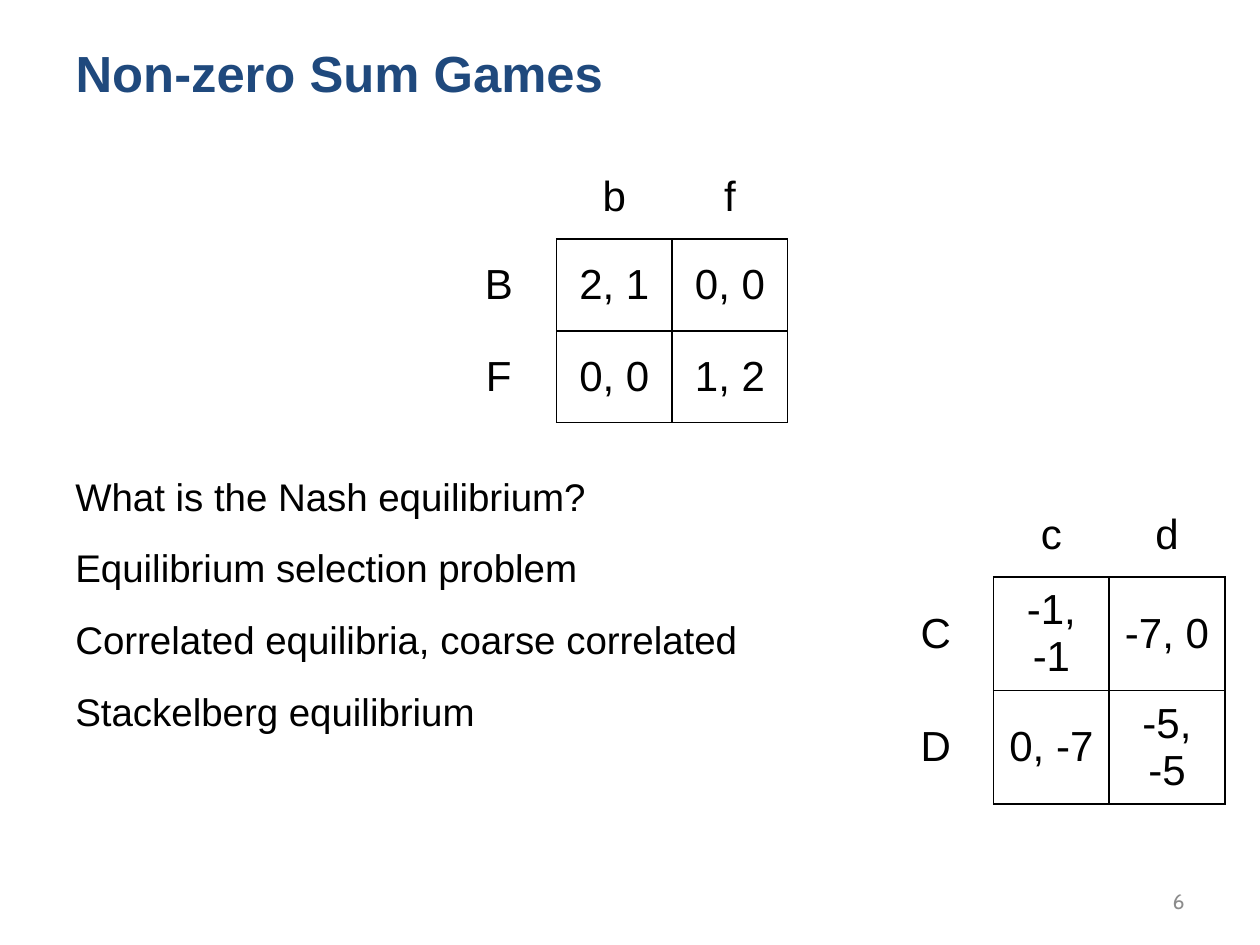
from lxml.etree import SubElement
from pptx import Presentation
from pptx.dml.color import RGBColor
from pptx.enum.text import MSO_ANCHOR, MSO_AUTO_SIZE, PP_ALIGN
from pptx.oxml.ns import qn
from pptx.util import Cm, Pt

COLORS = {"title": "1F497D", "text": "000000", "number": "8C8C8C"}
QUESTIONS = [
    "What is the Nash equilibrium?",
    "Equilibrium selection problem",
    "Correlated equilibria, coarse correlated",
    "Stackelberg equilibrium",
]
COORDINATION_GAME = [["", "b", "f"], ["B", "2, 1", "0, 0"], ["F", "0, 0", "1, 2"]]
PRISONERS_GAME = [["", "c", "d"], ["C", "-1, -1", "-7, 0"], ["D", "0, -7", "-5, -5"]]


def add_run(paragraph, text, size, color, font_name="Arial", bold=False):
    run = paragraph.add_run()
    run.text = text
    run.font.name = font_name
    run.font.size = Pt(size)
    run.font.bold = bold
    run.font.color.rgb = RGBColor.from_string(COLORS[color])


def add_text_box(slide, left, top, width, height):
    text_frame = slide.shapes.add_textbox(left, top, width, height).text_frame
    text_frame.word_wrap = True
    return text_frame


def place_title(slide, left, top, width, height):
    title = slide.shapes.title
    title.left, title.top, title.width, title.height = left, top, width, height
    text_frame = title.text_frame
    text_frame.auto_size = MSO_AUTO_SIZE.NONE
    text_frame.vertical_anchor = MSO_ANCHOR.MIDDLE
    paragraph = text_frame.paragraphs[0]
    paragraph.alignment = PP_ALIGN.LEFT
    add_run(paragraph, "Non-zero Sum Games", 29, "title", bold=True)


def add_questions(slide, left, top, width, height):
    text_frame = add_text_box(slide, left, top, width, height)
    for index, question in enumerate(QUESTIONS):
        paragraph = text_frame.add_paragraph() if index else text_frame.paragraphs[0]
        paragraph.line_spacing = Pt(26)
        if index:
            paragraph.space_before = Pt(15)
        add_run(paragraph, question, 22, "text")


def add_slide_number(slide, left, top, width, height):
    text_frame = add_text_box(slide, left, top, width, height)
    text_frame.vertical_anchor = MSO_ANCHOR.MIDDLE
    paragraph = text_frame.paragraphs[0]
    paragraph.alignment = PP_ALIGN.RIGHT
    add_run(paragraph, "6", 12, "number", "Cabin")


def set_borders(cell, row, column):
    """Draw only the edges that touch a payoff cell."""
    payoff = row > 0 and column > 0
    drawn = {
        "a:lnL": payoff,
        "a:lnR": row > 0,
        "a:lnT": payoff,
        "a:lnB": column > 0,
    }
    properties = cell._tc.get_or_add_tcPr()
    for tag, visible in drawn.items():
        line = SubElement(properties, qn(tag), w=str(Pt(1)))
        if visible:
            fill = SubElement(line, qn("a:solidFill"))
            SubElement(fill, qn("a:srgbClr"), val=COLORS["text"])
        else:
            SubElement(line, qn("a:noFill"))


def add_payoff_table(slide, left, top, game):
    column_width, row_heights = Cm(2.33), [Cm(1.7), Cm(1.85), Cm(1.85)]
    table = slide.shapes.add_table(
        len(game), len(game[0]), left, top,
        column_width * len(game[0]), sum(row_heights),
    ).table
    table.first_row = table.horz_banding = False
    for column in table.columns:
        column.width = column_width
    for row, values in enumerate(game):
        table.rows[row].height = row_heights[row]
        for column, value in enumerate(values):
            cell = table.cell(row, column)
            cell.vertical_anchor = MSO_ANCHOR.MIDDLE
            set_borders(cell, row, column)
            cell.fill.background()
            if value:
                paragraph = cell.text_frame.paragraphs[0]
                paragraph.alignment = PP_ALIGN.CENTER
                add_run(paragraph, value, 24, "text")


def main():
    presentation = Presentation()
    presentation.slide_width, presentation.slide_height = Cm(25.4), Cm(19.05)
    slide = presentation.slides.add_slide(presentation.slide_layouts[5])
    place_title(slide, Cm(1.27), Cm(0.66), Cm(21.64), Cm(1.6))
    add_questions(slide, Cm(1.27), Cm(9.42), Cm(15.5), Cm(5.6))
    add_slide_number(slide, Cm(18.2), Cm(17.65), Cm(5.93), Cm(1.02))
    add_payoff_table(slide, Cm(8.89), Cm(3.12), COORDINATION_GAME)
    add_payoff_table(slide, Cm(17.7), Cm(9.93), PRISONERS_GAME)
    presentation.save("out.pptx")


if __name__ == "__main__":
    main()
